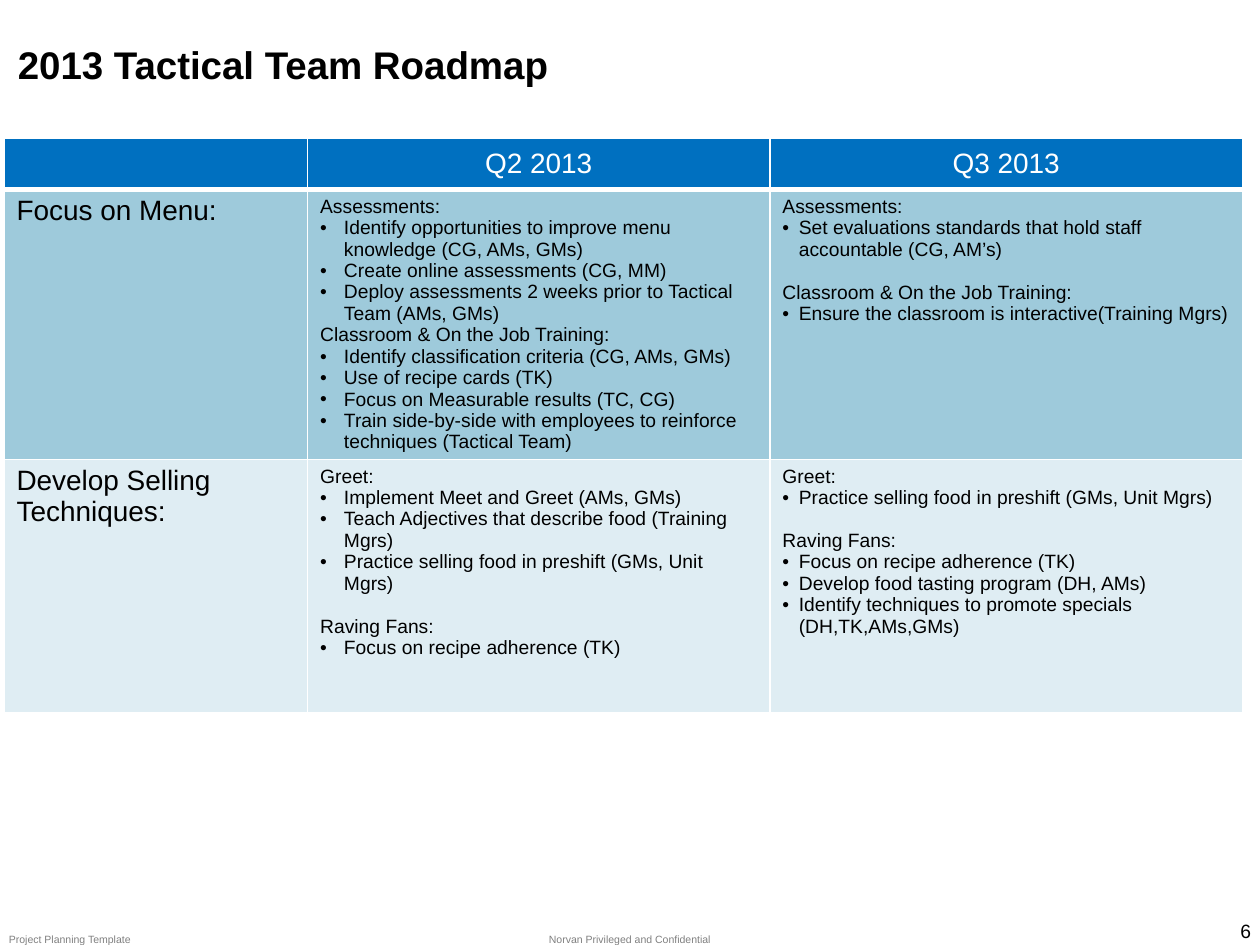
from dataclasses import dataclass

from lxml.etree import SubElement
from pptx import Presentation
from pptx.dml.color import RGBColor
from pptx.enum.text import MSO_ANCHOR as Anchor, MSO_AUTO_SIZE as Fit, PP_ALIGN as Align
from pptx.oxml.ns import qn
from pptx.util import Cm, Pt

BLACK = RGBColor(0x00, 0x00, 0x00)
WHITE = RGBColor(0xFF, 0xFF, 0xFF)
GRAY = RGBColor(0x80, 0x80, 0x80)
BLUE = RGBColor(0x00, 0x70, 0xC0)
TEAL = RGBColor(0x9E, 0xCA, 0xDB)
PALE = RGBColor(0xDF, 0xED, 0xF3)

COLS = (6.12, 9.32, 9.53)
ROWS = (0.99, 5.11, 5.11)
GAP = 12.3  # one line of 11 pt text


@dataclass
class Group:
    head: str
    items: tuple[str, ...]
    gap: float = 0


@dataclass
class Quarter:
    groups: tuple[Group, ...]
    indent: float


@dataclass
class Focus:
    name: str
    fill: RGBColor
    quarters: tuple[Quarter, ...]


@dataclass
class Note:
    text: str
    box: tuple[float, float, float, float]
    size: float
    color: RGBColor
    align: Align
    pad: float = 0
    anchor: Anchor = Anchor.TOP


PLAN = (
    Focus("Focus on Menu:", TEAL, (
        Quarter((
            Group("Assessments:", (
                "Identify opportunities to improve menu knowledge (CG, AMs, GMs)",
                "Create online assessments (CG, MM)",
                "Deploy assessments 2 weeks prior to Tactical Team (AMs, GMs)")),
            Group("Classroom & On the Job Training:", (
                "Identify classification criteria (CG, AMs, GMs)",
                "Use of recipe cards (TK)",
                "Focus on Measurable results (TC, CG)",
                "Train side-by-side with employees to reinforce techniques (Tactical Team)")),
        ), 0.48),
        Quarter((
            Group("Assessments:", (
                "Set evaluations standards that hold staff accountable (CG, AM’s)",)),
            Group("Classroom & On the Job Training:", (
                "Ensure the classroom is interactive(Training Mgrs)",), GAP),
        ), 0.33))),
    Focus("Develop Selling Techniques:", PALE, (
        Quarter((
            Group("Greet:", (
                "Implement Meet and Greet (AMs, GMs)",
                "Teach Adjectives that describe food (Training Mgrs)",
                "Practice selling food in preshift (GMs, Unit Mgrs)")),
            Group("Raving Fans:", ("Focus on recipe adherence (TK)",), GAP),
        ), 0.48),
        Quarter((
            Group("Greet:", ("Practice selling food in preshift (GMs, Unit Mgrs)",)),
            Group("Raving Fans:", (
                "Focus on recipe adherence (TK)",
                "Develop food tasting program (DH, AMs)",
                "Identify techniques to promote specials (DH,TK,AMs,GMs)"), GAP),
        ), 0.33))),
)

NOTES = (
    Note("Norvan Privileged and Confidential", (10.74, 18.8, 3.91, 0.25), 6, GRAY, Align.CENTER),
    Note("Project Planning Template", (0.18, 18.8, 7.62, 0.25), 6, GRAY, Align.LEFT),
    Note("6", (22.68, 18.52, 2.79, 0.51), 11, BLACK, Align.RIGHT, 0.25, Anchor.MIDDLE),
)


def write(frame, text: str, *, size: float, color=BLACK, bold=False,
          align=Align.LEFT, indent: float = 0, before: float = 0) -> None:
    """Fill the first paragraph if it is empty, else add one; indent makes a bullet."""
    para = frame.paragraphs[0]
    if para.runs:
        para = frame.add_paragraph()
    para.text = text
    para.alignment = align
    para.space_before = Pt(before)
    if indent:
        props = para._p.get_or_add_pPr()
        props.set("marL", str(Cm(indent)))
        props.set("indent", str(-Cm(indent)))
        SubElement(props, qn("a:buFont"), typeface="Arial")
        SubElement(props, qn("a:buChar"), char="•")
    font = para.runs[0].font
    font.name, font.size, font.bold = "Arial", Pt(size), bold
    font.color.rgb = color


def dress(cell, fill: RGBColor, base: float = 1) -> None:
    """Give a cell white borders and its fill."""
    props = cell._tc.get_or_add_tcPr()
    for side, width in (("L", 1), ("R", 1), ("T", 1), ("B", base)):
        line = SubElement(props, qn(f"a:ln{side}"), w=str(Pt(width)))
        SubElement(SubElement(line, qn("a:solidFill")), qn("a:srgbClr"), val=str(WHITE))
    cell.fill.solid()
    cell.fill.fore_color.rgb = fill


def list_out(frame, quarter: Quarter) -> None:
    for group in quarter.groups:
        write(frame, group.head, size=11, before=group.gap)
        for item in group.items:
            write(frame, item, size=11, indent=quarter.indent)


def add_note(slide, note: Note) -> None:
    frame = slide.shapes.add_textbox(*map(Cm, note.box)).text_frame
    frame.word_wrap = True
    frame.vertical_anchor = note.anchor
    frame.margin_left = frame.margin_right = Cm(note.pad)
    frame.margin_top = frame.margin_bottom = Cm(note.pad / 2)
    write(frame, note.text, size=note.size, color=note.color, align=note.align)


def add_plan(slide) -> None:
    table = slide.shapes.add_table(len(ROWS), len(COLS), Cm(0.08), Cm(2.79),
                                   Cm(sum(COLS)), Cm(sum(ROWS))).table
    for col, width in zip(table.columns, COLS):
        col.width = Cm(width)
    for row, height in zip(table.rows, ROWS):
        row.height = Cm(height)

    # Header row
    for x, head in enumerate(("", "Q2 2013", "Q3 2013")):
        cell = table.cell(0, x)
        dress(cell, BLUE, base=3)
        cell.vertical_anchor = Anchor.MIDDLE
        if head:
            write(cell.text_frame, head, size=16, color=WHITE, align=Align.CENTER)

    # One row per focus
    for y, focus in enumerate(PLAN, 1):
        for x in range(len(COLS)):
            dress(table.cell(y, x), focus.fill)
        write(table.cell(y, 0).text_frame, focus.name, size=16)
        for x, quarter in enumerate(focus.quarters, 1):
            list_out(table.cell(y, x).text_frame, quarter)


def main() -> None:
    deck = Presentation()
    deck.slide_width, deck.slide_height = Cm(25.4), Cm(19.05)
    slide = deck.slides.add_slide(deck.slide_layouts[5])

    # Title
    title = slide.shapes.title
    title.left, title.top, title.width, title.height = map(Cm, (0.36, 0.71, 24.82, 1.17))
    frame = title.text_frame
    frame.auto_size = Fit.NONE
    frame.vertical_anchor = Anchor.MIDDLE
    frame.margin_left = frame.margin_right = 0
    write(frame, "2013 Tactical Team Roadmap", size=22, bold=True)

    # Roadmap and footer
    add_plan(slide)
    for note in NOTES:
        add_note(slide, note)
    deck.save("out.pptx")


if __name__ == "__main__":
    main()
